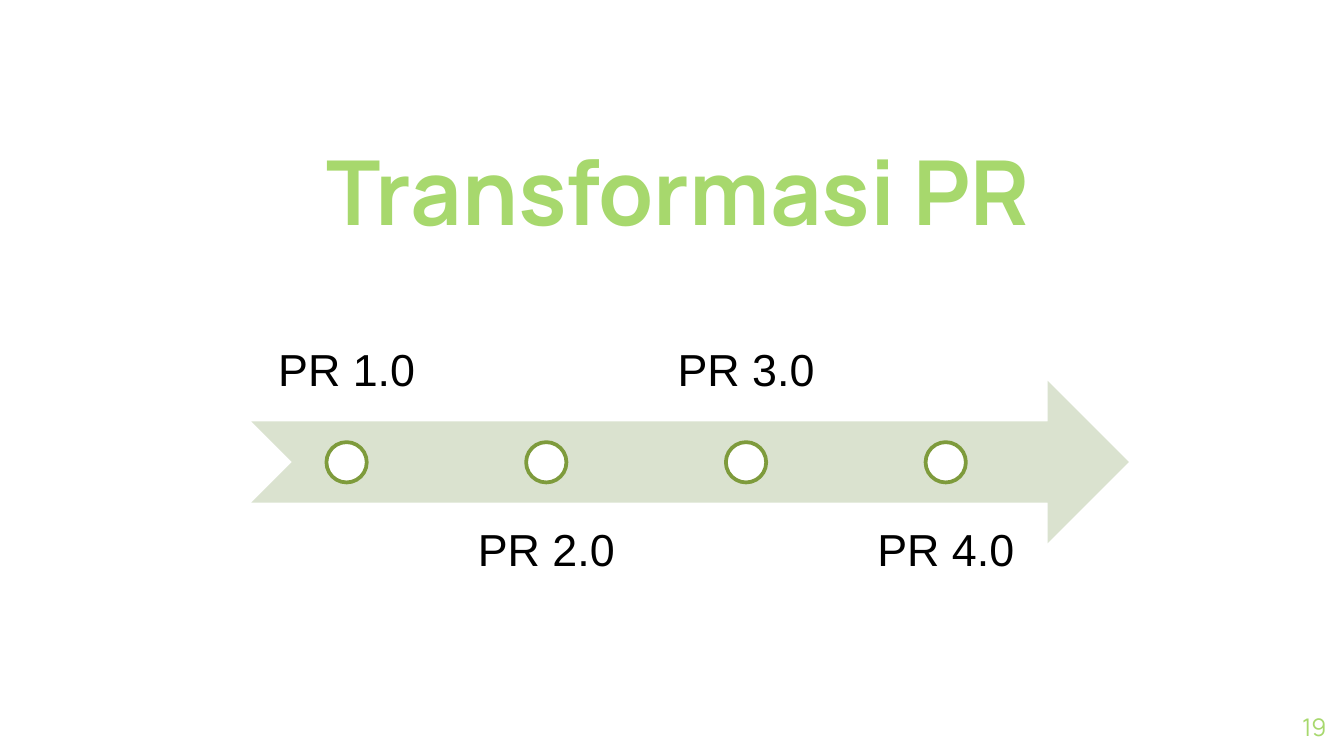
"""Build the PR transformation timeline slide."""
from pptx import Presentation
from pptx.dml.color import RGBColor
from pptx.enum.shapes import MSO_SHAPE
from pptx.enum.text import MSO_ANCHOR, MSO_AUTO_SIZE, PP_ALIGN
from pptx.util import Inches, Pt

ARROW, DOT = MSO_SHAPE.NOTCHED_RIGHT_ARROW, MSO_SHAPE.OVAL
TOP, MID, LOW = MSO_ANCHOR.TOP, MSO_ANCHOR.MIDDLE, MSO_ANCHOR.BOTTOM
CENTRE, RIGHT = PP_ALIGN.CENTER, PP_ALIGN.RIGHT
FIXED = MSO_AUTO_SIZE.NONE
HUES = {"lime": "A7D86D", "sage": "DAE2CF", "moss": "7E9B3C",
        "white": "FFFFFF", "black": "000000"}

deck = Presentation()
deck.slide_width = Inches(10)
deck.slide_height = deck.slide_width * 9 // 16
unit = deck.slide_width / 100


def grid(*cells):
    """Turn hundredths of the slide width into lengths."""
    return [round(cell * unit) for cell in cells]


def write(box, text, hue, font, align, anchor, pad=0):
    """Fill a box with one formatted line of text."""
    frame = box.text_frame
    frame.text = text
    pad = round(pad * unit)
    form = {"word_wrap": True, "auto_size": FIXED, "vertical_anchor": anchor,
            "margin_left": pad, "margin_right": pad,
            "margin_top": pad, "margin_bottom": pad}
    for name, value in form.items():
        setattr(frame, name, value)
    line = frame.paragraphs[0]
    line.alignment = align
    run = line.runs[0]
    for name, value in font.items():
        setattr(run.font, name, value)
    run.font.color.rgb = RGBColor.from_string(HUES[hue])
    return line


slide = deck.slides.add_slide(deck.slide_layouts[5])
title = slide.shapes.title
place = zip(("left", "top", "width", "height"), grid(16, 8.75, 68.9, 9.4))
for name, value in place:
    setattr(title, name, value)
write(title, "Transformasi PR", "lime",
      {"name": "Manrope", "size": Pt(48), "bold": True}, CENTRE, LOW)

number = slide.shapes.add_textbox(*grid(92.7, 51.95, 6, 4.3))
write(number, "19", "lime", {"name": "Manrope", "size": Pt(13)}, RIGHT, MID)

group = slide.shapes.add_group_shape().shapes
arrow = group.add_shape(ARROW, *grid(18.7, 28.33, 65.3, 12.1))
arrow.shadow.inherit = False
arrow.fill.solid()
arrow.fill.fore_color.rgb = RGBColor.from_string(HUES["sage"])
arrow.line.fill.background()

first, step, wide, tall, size = 18.74, 14.86, 14.1, 12.1, 3
for item, text in enumerate(("PR 1.0", "PR 2.0", "PR 3.0", "PR 4.0")):
    left = first + item * step
    top, anchor = ((19.3, LOW), (37.4, TOP))[item % 2]
    label = group.add_textbox(*grid(left, top, wide, tall))
    line = write(label, text, "black", {"name": "Arial", "size": Pt(24)},
                 CENTRE, anchor, 1.9)
    line.line_spacing = 0.9

    dot = group.add_shape(
        DOT, *grid(left + (wide - size) / 2, 32.9, size, size))
    dot.shadow.inherit = False
    dot.fill.solid()
    dot.fill.fore_color.rgb = RGBColor.from_string(HUES["white"])
    dot.line.color.rgb = RGBColor.from_string(HUES["moss"])
    dot.line.width = Pt(2)

deck.save("out.pptx")
